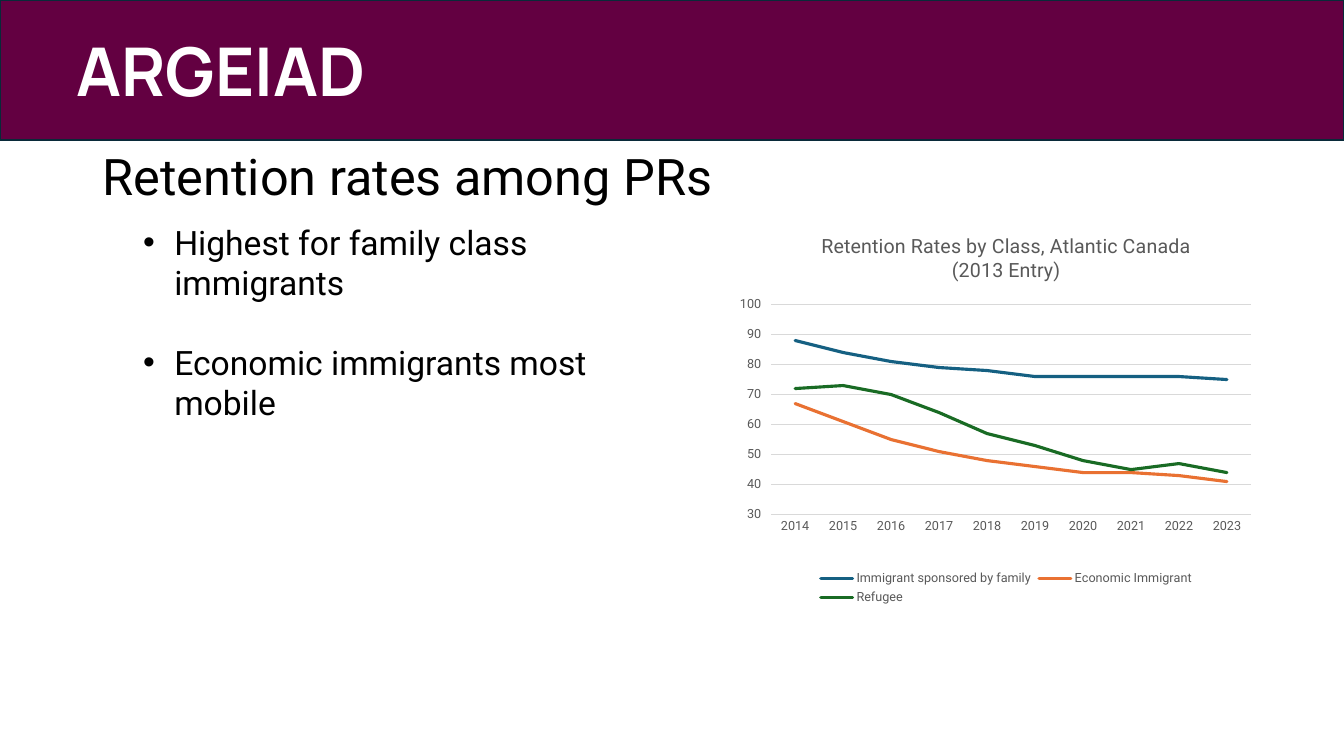
from pptx import Presentation
from pptx.chart.data import CategoryChartData
from pptx.dml.color import RGBColor
from pptx.enum.chart import XL_CHART_TYPE as ChartType, XL_LEGEND_POSITION as LegendPos, XL_TICK_MARK as Tick
from pptx.enum.shapes import MSO_SHAPE as Shape
from pptx.enum.text import MSO_ANCHOR as Anchor, PP_ALIGN as Align
from pptx.oxml import parse_xml
from pptx.oxml.ns import nsdecls
from pptx.util import Inches, Pt

THEME = {
    "heading": "Manrope", "body": "Roboto",
    "plum": "630041", "navy": "092A39", "white": "FFFFFF", "black": "000000",
    "gray": "595959", "grid": "D9D9D9",
    "blue": "156082", "orange": "E97132", "green": "196B24",
    "banner_size": 48, "title_size": 36, "bullet_size": 24,
    "chart_title_size": 14, "chart_size": 10, "label_size": 9,
}


def style(font, size, color, face="body", bold=False):
    font.name = THEME[face]
    font.size = Pt(THEME[size])
    font.bold = bold
    font.color.rgb = RGBColor.from_string(THEME[color])


def stroke(line, color, width):
    line.color.rgb = RGBColor.from_string(THEME[color])
    line.width = Pt(width)


prs = Presentation()
prs.slide_width, prs.slide_height = Inches(13.33), Inches(7.5)
s = prs.slides.add_slide(prs.slide_layouts[6])

banner = s.shapes.add_shape(Shape.RECTANGLE, 0, 0, prs.slide_width, Inches(1.39))
banner.shadow.inherit = False
banner.fill.solid()
banner.fill.fore_color.rgb = RGBColor.from_string(THEME["plum"])
stroke(banner.line, "navy", 1.5)
tf = banner.text_frame
tf.margin_left = Inches(0.76)
tf.vertical_anchor = Anchor.MIDDLE
p = tf.paragraphs[0]
p.alignment = Align.LEFT
r = p.add_run()
r.text = "ARGEIAD"
style(r.font, "banner_size", "white", "heading", True)

title = s.shapes.add_textbox(Inches(0.92), Inches(1.05), Inches(11.5), Inches(1.45))
tf = title.text_frame
tf.word_wrap = True
tf.vertical_anchor = Anchor.MIDDLE
p = tf.paragraphs[0]
p.line_spacing = 0.9
r = p.add_run()
r.text = "Retention rates among PRs"
style(r.font, "title_size", "black")

points = s.shapes.add_textbox(Inches(1.32), Inches(2.15), Inches(5.55), Inches(3.43))
tf = points.text_frame
tf.word_wrap = True
for i, text in enumerate(["Highest for family class immigrants", "Economic immigrants most mobile"]):
    p = tf.add_paragraph() if i else tf.paragraphs[0]
    pPr = p._p.get_or_add_pPr()
    pPr.set("marL", str(Inches(0.31)))
    pPr.set("indent", str(-Inches(0.31)))
    if i:
        p.space_before = Pt(28)
    pPr.append(parse_xml(f'<a:buFont {nsdecls("a")} typeface="Arial"/>'))
    pPr.append(parse_xml(f'<a:buChar {nsdecls("a")} char="•"/>'))
    r = p.add_run()
    r.text = text
    style(r.font, "bullet_size", "black")

series = [
    ("Immigrant sponsored by family", "blue", (88, 84, 81, 79, 78, 76, 76, 76, 76, 75)),
    ("Economic Immigrant", "orange", (67, 61, 55, 51, 48, 46, 44, 44, 43, 41)),
    ("Refugee", "green", (72, 73, 70, 64, 57, 53, 48, 45, 47, 44)),
]
data = CategoryChartData()
data.categories = [str(year) for year in range(2014, 2024)]
for name, color, values in series:
    data.add_series(name, values)
chart = s.shapes.add_chart(
    ChartType.LINE, Inches(7.3), Inches(2.15), Inches(5.36), Inches(3.89), data).chart
style(chart.font, "chart_size", "black")

chart.has_title = True
tf = chart.chart_title.text_frame
for i, text in enumerate(["Retention Rates by Class, Atlantic Canada", "(2013 Entry)"]):
    p = tf.add_paragraph() if i else tf.paragraphs[0]
    r = p.add_run()
    r.text = text
    style(r.font, "chart_title_size", "gray")
chart.chart_title.include_in_layout = False

chart.has_legend = True
chart.legend.position = LegendPos.BOTTOM
chart.legend.include_in_layout = False
style(chart.legend.font, "label_size", "gray")

years, rates = chart.category_axis, chart.value_axis
for axis in (years, rates):
    style(axis.tick_labels.font, "label_size", "gray")
years.major_tick_mark = Tick.NONE
stroke(years.format.line, "grid", 0.75)
rates.minimum_scale, rates.maximum_scale, rates.major_unit = 30, 100, 10
rates.major_tick_mark = Tick.OUTSIDE
rates.format.line.fill.background()
stroke(rates.major_gridlines.format.line, "grid", 0.75)

plot = chart.plots[0]
plot.vary_by_categories = False
for line, (name, color, values) in zip(plot.series, series):
    line.smooth = False
    stroke(line.format.line, color, 2.25)
    line.format.line._ln.set("cap", "rnd")

plot_area = chart._chartSpace.chart.plotArea
for old in plot_area.xpath("c:layout"):
    plot_area.remove(old)
frame = {"x": 0.065, "y": 0.224, "w": 0.888, "h": 0.536}
modes = '<c:xMode val="edge"/><c:yMode val="edge"/>'
sides = "".join(f'<c:{side} val="{share}"/>' for side, share in frame.items())
plot_area.insert(0, parse_xml(
    f'<c:layout {nsdecls("c")}><c:manualLayout><c:layoutTarget val="inner"/>'
    f'{modes}{sides}</c:manualLayout></c:layout>'))

prs.save("out.pptx")
